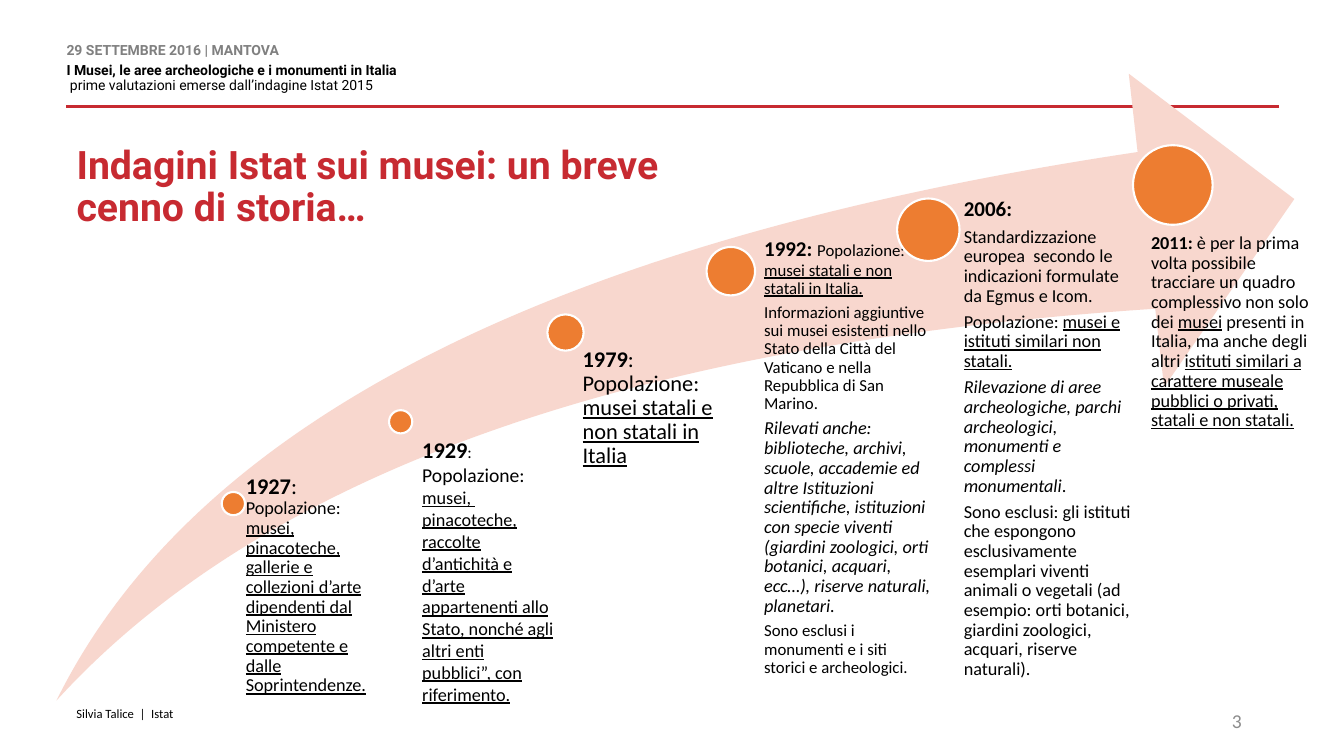
from lxml.etree import SubElement
from pptx import Presentation
from pptx.dml.color import RGBColor
from pptx.enum.shapes import MSO_CONNECTOR, MSO_SHAPE
from pptx.enum.text import MSO_ANCHOR, MSO_AUTO_SIZE, PP_ALIGN
from pptx.oxml.ns import qn
from pptx.util import Pt

RED, ORANGE, PEACH = "C72A31", "ED7D31", "F8D7CE"
BLACK, WHITE, GREY, PALE_GREY = "000000", "FFFFFF", "808080", "8C8C8C"


def paint(color_format, color):
    color_format.rgb = RGBColor.from_string(color)


def write(frame, paragraphs, margins, font="Calibri", color=BLACK, spacing=None, after=0):
    """Fill a frame with paragraphs of (text, size, style) runs; style letters are b, i, u."""
    frame.word_wrap = True
    frame.auto_size = MSO_AUTO_SIZE.NONE
    frame.margin_left, frame.margin_top, frame.margin_right, frame.margin_bottom = map(Pt, margins)
    for number, runs in enumerate(paragraphs):
        paragraph = frame.add_paragraph() if number else frame.paragraphs[0]
        paragraph.line_spacing = spacing
        paragraph.space_after = Pt(after)
        for text, size, style in runs:
            for part_number, part in enumerate(text.split("\n")):
                if part_number:
                    paragraph.add_line_break()
                run = paragraph.add_run()
                run.text = part
                run.font.name = font
                run.font.size = Pt(size)
                run.font.bold = "b" in style
                run.font.italic = "i" in style
                run.font.underline = "u" in style
                paint(run.font.color, color)


DEFAULT_MARGINS = (7.2, 3.6, 7.2, 3.6)
NO_MARGINS = (0, 0, 0, 0)

presentation = Presentation()
presentation.slide_width, presentation.slide_height = Pt(960), Pt(540)
slide = presentation.slides.add_slide(presentation.slide_layouts[5])
shapes = slide.shapes

# Header
rule = shapes.add_connector(MSO_CONNECTOR.STRAIGHT, Pt(913.7), Pt(76.3), Pt(47.5), Pt(76.3))
rule.line.width = Pt(2)
paint(rule.line.color, RED)
SubElement(rule._element.spPr, qn("a:effectLst"))

header = shapes.add_textbox(Pt(47.5), Pt(31), Pt(397.4), Pt(36.7)).text_frame
write(header, [
    [("29 SETTEMBRE 2016 | MANTOVA", 10, "b")],
    [("I Musei, le aree archeologiche e i monumenti in Italia", 10, "b")],
    [(" prime valutazioni emerse dall’indagine Istat 2015", 10, "")],
], NO_MARGINS, font="Roboto", spacing=Pt(11))
header.paragraphs[0].space_after = Pt(3)
paint(header.paragraphs[0].runs[0].font.color, GREY)

title = shapes.title
title.left, title.top, title.width, title.height = Pt(54.7), Pt(103.7), Pt(466.6), Pt(64.1)
write(title.text_frame, [[("Indagini Istat sui musei: un breve cenno di storia…", 28, "b")]],
      NO_MARGINS, font="Roboto", color=RED, spacing=0.9)
title.text_frame.vertical_anchor = MSO_ANCHOR.TOP
title.text_frame.paragraphs[0].alignment = PP_ALIGN.LEFT

# Timeline
swoosh = shapes.add_shape(MSO_SHAPE.SWOOSH_ARROW, Pt(40.3), Pt(52.6), Pt(884.2), Pt(447.8))
swoosh.adjustments[0] = swoosh.adjustments[1] = 0.25
swoosh.shadow.inherit = False
swoosh.fill.solid()
paint(swoosh.fill.fore_color, PEACH)
swoosh.line.fill.background()

# Each milestone: dot (left, top, diameter), text box, left margin, paragraphs
milestones = [
    ((158.4, 351.4, 16.6), (167, 339.1, 105.8, 168.5), 8.6, [
        [("1927", 16, "b"), (": ", 16, ""), ("Popolazione: ", 13, ""),
         ("musei, pinacoteche, gallerie e collezioni d’arte dipendenti dal Ministero "
          "competente e\ndalle Soprintendenze.", 13, "u")],
    ]),
    ((391, 224.6, 25.9), (402.5, 248.4, 118.8, 126.7), 13.7, [
        [("1979", 16, "b"), (": Popolazione: ", 16, ""),
         ("musei statali e non statali in Italia", 16, "u")],
    ]),
    ((504.7, 176.4, 34.6), (527.8, 170.6, 138.2, 366.5), 18, [
        [("1992: ", 15, "b"), ("Popolazione: ", 12, ""),
         ("musei statali e non statali in Italia.", 12, "u")],
        [("Informazioni aggiuntive sui musei esistenti nello Stato della Città del "
          "Vaticano e nella Repubblica di San Marino.", 12, "")],
        [("Rilevati anche: biblioteche, archivi, scuole, accademie ed altre Istituzioni "
          "scientifiche, istituzioni con specie viventi (giardini zoologici, orti botanici, "
          "acquari, ecc…), riserve naturali, planetari.", 13, "i")],
        [("Sono esclusi i monumenti e i siti storici e archeologici.", 12, "")],
    ]),
    ((640.8, 141.8, 44.6), (664.6, 141.8, 143.3, 300.2), 23.8, [
        [("2006:", 15, "b")],
        [("Standardizzazione europea  secondo le indicazioni formulate da Egmus e Icom.", 13, "")],
        [("Popolazione: ", 13, ""), ("musei e istituti similari non statali.", 13, "u")],
        [("Rilevazione di aree archeologiche, parchi archeologici, monumenti e complessi "
          "monumentali", 13, "i"), (".", 13, "")],
        [("Sono esclusi: gli istituti che espongono esclusivamente esemplari viventi animali "
          "o vegetali (ad esempio: orti botanici, giardini zoologici, acquari, riserve "
          "naturali).", 13, "")],
    ]),
    ((809.3, 103.7, 56.9), (792, 167, 143.3, 329.8), 30.2, [
        [("2011: ", 13, "b"),
         ("è per la prima volta possibile tracciare un quadro complessivo non solo dei ", 13, ""),
         ("musei", 13, "u"), (" presenti in Italia, ma anche degli altri ", 13, ""),
         ("istituti similari a carattere museale pubblici o privati, statali e non statali.",
          13, "u")],
    ]),
    ((277.9, 293, 16.6), (294.5, 314.6, 109.4, 185.8), None, [
        [("1929", 16, "b"), (": ", 12, ""), ("Popolazione: ", 14, ""),
         ("musei,  pinacoteche, raccolte d’antichità e d’arte appartenenti allo Stato, nonché "
          "agli altri enti pubblici”, con riferimento.", 13, "u")],
    ]),
]
for (left, top, diameter), box, left_margin, paragraphs in milestones:
    dot = shapes.add_shape(MSO_SHAPE.OVAL, Pt(left), Pt(top), Pt(diameter), Pt(diameter))
    dot.shadow.inherit = False
    dot.fill.solid()
    paint(dot.fill.fore_color, ORANGE)
    paint(dot.line.color, WHITE)
    dot.line.width = Pt(1.5)

    story = shapes.add_textbox(*map(Pt, box)).text_frame
    if left_margin is None:
        write(story, paragraphs, DEFAULT_MARGINS)
        story.vertical_anchor = MSO_ANCHOR.MIDDLE
    else:
        write(story, paragraphs, (left_margin, 0, 0, 0), spacing=0.9, after=4.5)

# Footer
author = shapes.add_textbox(Pt(47.5), Pt(500.4), Pt(594.7), Pt(28.8)).text_frame
write(author, [[("Silvia Talice  |  Istat", 9, "")]], DEFAULT_MARGINS)

page_number = shapes.add_textbox(Pt(678.2), Pt(500.4), Pt(216), Pt(28.8)).text_frame
write(page_number, [[("3", 14, "")]], DEFAULT_MARGINS, color=PALE_GREY)
page_number.vertical_anchor = MSO_ANCHOR.MIDDLE
page_number.paragraphs[0].alignment = PP_ALIGN.RIGHT

presentation.save("out.pptx")
